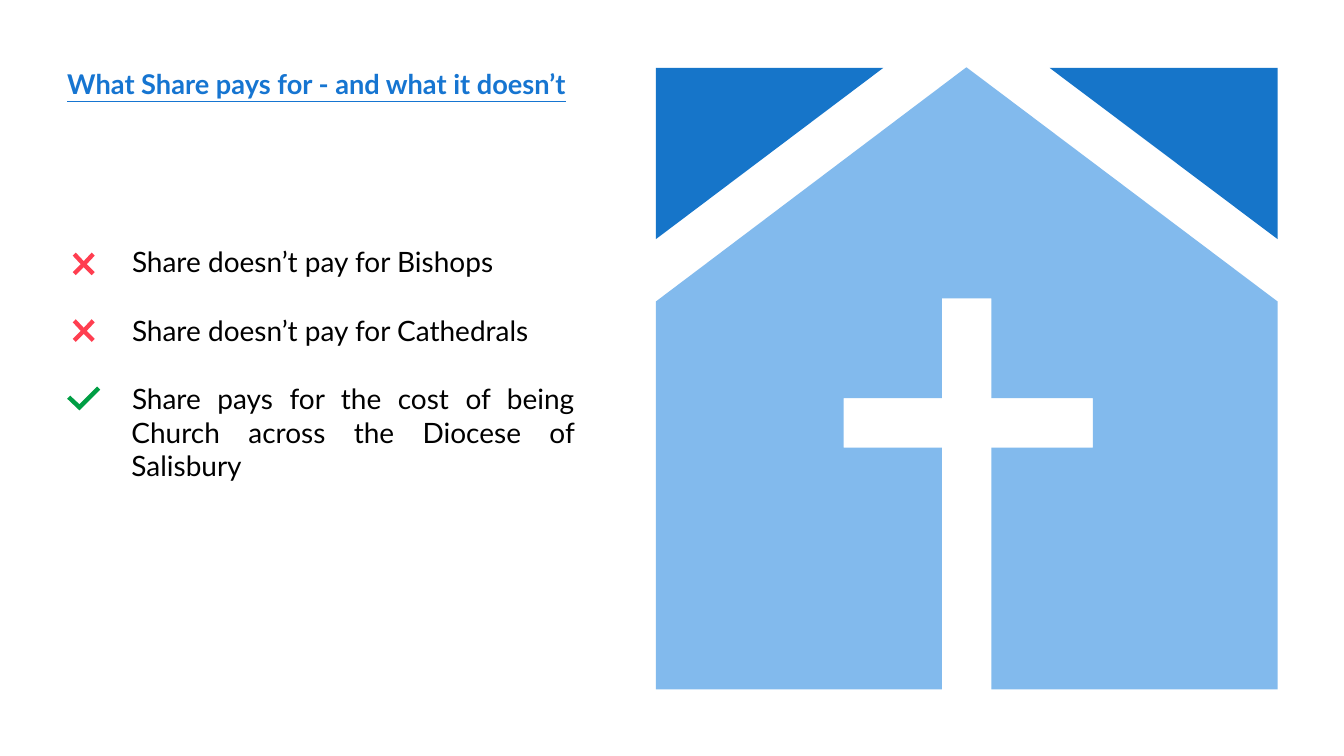
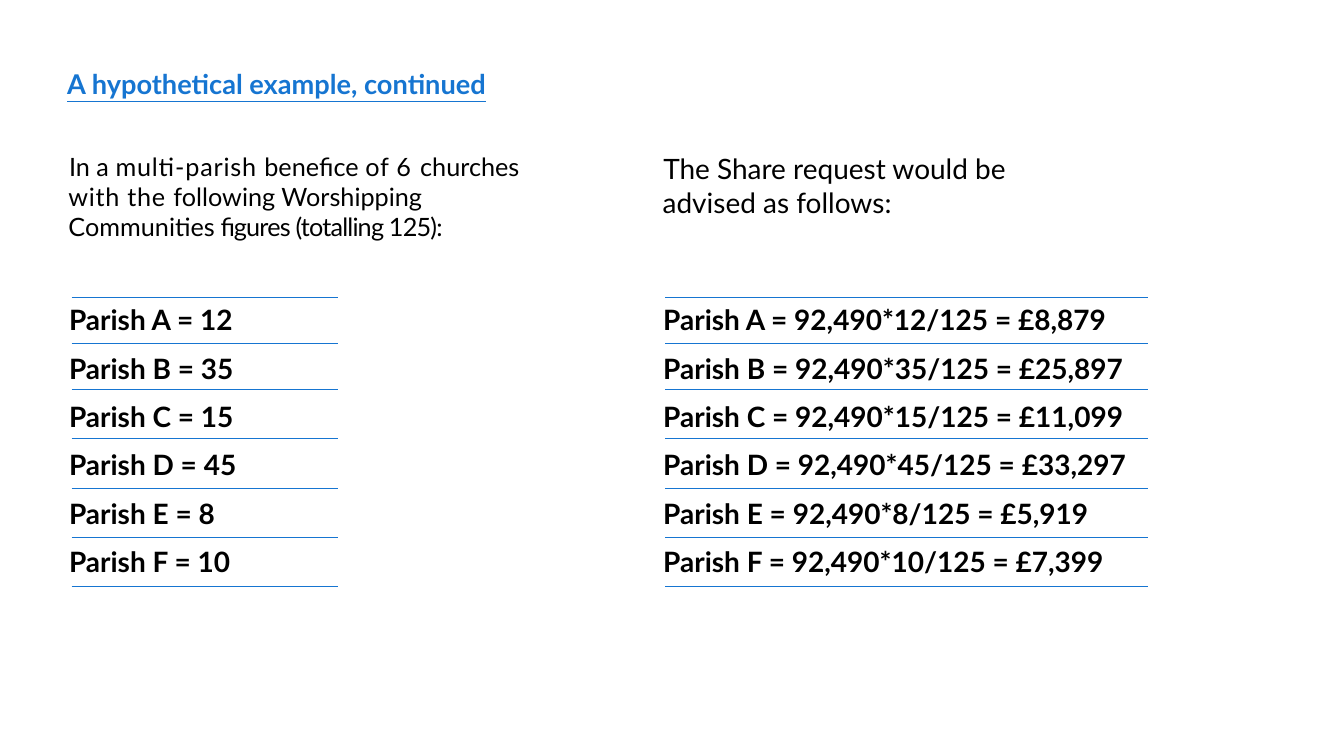
from lxml import etree
from pptx import Presentation
from pptx import util as u
from pptx.dml.color import RGBColor
from pptx.enum import shapes, text
from pptx.oxml import ns

PX = 9144
WIDE = u.Pt(1583)
HIGH = u.Pt(890)
FONT = "Lato"
BLACK = RGBColor(0x00, 0x00, 0x00)
BLUE = RGBColor(0x16, 0x75, 0xD1)
ROOF = RGBColor(0x16, 0x75, 0xC9)
WALL = RGBColor(0x82, 0xBA, 0xED)
GREEN = RGBColor(0x00, 0x9E, 0x44)
RED = RGBColor(0xFF, 0x3E, 0x50)

TICK = [(49, 0), (20, 29), (5, 15), (0, 20), (20, 39), (54, 5)]
CROSS = [(31, 0), (18, 14), (5, 0), (0, 5), (13, 19), (0, 32),
         (5, 37), (18, 24), (31, 37), (36, 32), (23, 19), (36, 5)]
LEFT_SKY = [(1445, 111), (1073, 111), (1073, 391)]
RIGHT_SKY = [(1717, 111), (2090, 111), (2090, 391)]
CHURCH = [(2090, 493), (1581, 110), (1073, 493), (1073, 1127),
          (1541, 1127), (1541, 732), (1380, 732), (1380, 651),
          (1541, 651), (1541, 488), (1622, 488), (1622, 651),
          (1788, 651), (1788, 732), (1622, 732), (1622, 1127),
          (2090, 1127)]

POINTS = ["Share doesn’t pay for Bishops",
          "Share doesn’t pay for Cathedrals",
          "Share pays for the cost of being Church across the Diocese "
          "of Salisbury"]
INTRO = [("In a ", 0), ("multi-parish ", 90), ("benefice ", 0), ("of ", 90),
         ("6 ", 150), ("churches ", 0), ("with the ", 85),
         ("following Worshipping Communities", 0),
         (" figures (totalling 125):", -100)]
ROWS = [("A", 12, "8,879"), ("B", 35, "25,897"), ("C", 15, "11,099"),
        ("D", 45, "33,297"), ("E", 8, "5,919"), ("F", 10, "7,399")]
RULES = [486, 562, 637, 717, 798, 879, 958]


def add_frame(slide, x, y, w, h):
    box = slide.shapes.add_textbox(x * PX, y * PX, w * PX, h * PX)
    frame = box.text_frame
    frame.word_wrap = True
    frame.margin_left = frame.margin_right = 0
    frame.margin_top = frame.margin_bottom = 0
    frame.vertical_anchor = text.MSO_ANCHOR.TOP
    return frame


def style(para, size=33, color=BLACK, bold=False, under=False, indent=1):
    para._p.get_or_add_pPr().set("indent", str(indent * PX))
    font = para.font
    font.name = FONT
    font.size = u.Pt(size)
    font.color.rgb = color
    font.bold = bold
    font.underline = under


def add_text(slide, words, x, y, w, h, **look):
    para = add_frame(slide, x, y, w, h).paragraphs[0]
    para.text = words
    style(para, **look)


def add_title(slide, words):
    add_text(slide, words, 110, 110, 1017, 54,
             size=32, color=BLUE, bold=True, under=True, indent=0)


def add_list(slide, items, x, y, w, h):
    frame = add_frame(slide, x, y, w, h)
    for i, item in enumerate(items):
        para = frame.add_paragraph() if i else frame.paragraphs[0]
        para.text = item
        if i:
            para.alignment = text.PP_ALIGN.JUSTIFY
            para.space_before = u.Pt(41)
        style(para)


def add_spaced(slide, parts, x, y, w, h, size):
    para = add_frame(slide, x, y, w, h).paragraphs[0]
    for words, gap in parts:
        run = para.add_run()
        run.text = words
        if gap:
            run.font._element.set("spc", str(gap))
    style(para, size=size)


def add_form(slide, points, color, x=0, y=0):
    spots = [(x + dx, y + dy) for dx, dy in points]
    pen = slide.shapes.build_freeform(*spots[0], scale=PX)
    pen.add_line_segments(spots[1:], close=True)
    shape = pen.convert_to_shape()
    shape.shadow.inherit = False
    shape.fill.solid()
    shape.fill.fore_color.rgb = color
    shape.line.fill.background()


def add_rule(slide, x, y, w):
    rule = slide.shapes.add_connector(
        shapes.MSO_CONNECTOR.STRAIGHT, x * PX, y * PX, (x + w) * PX, y * PX)
    rule.line.color.rgb = BLUE
    rule.line.width = u.Pt(0.82)
    etree.SubElement(rule._element.spPr, ns.qn("a:effectLst"))


def add_rows(slide, rows, x, left, w):
    for y in RULES:
        add_rule(slide, left, y, w)
    for i, row in enumerate(rows):
        add_text(slide, row, x, 495 + 79 * i, 950, 56, bold=True)


def draw_share(slide):
    add_title(slide, "What Share pays for - and what it doesn’t")
    add_form(slide, TICK, GREEN, 110, 632)
    for y in (413, 522):
        add_form(slide, CROSS, RED, 119, y)
    add_list(slide, POINTS, 215, 400, 725, 392)
    add_form(slide, LEFT_SKY, ROOF)
    add_form(slide, RIGHT_SKY, ROOF)
    add_form(slide, CHURCH, WALL)


def draw_sums(slide):
    add_title(slide, "A hypothetical example, continued")
    add_text(slide, "The Share request would be advised as follows:",
             1084, 248, 571, 111)
    add_rows(slide, [f"Parish {name} = 92,490*{count}/125 = £{cost}"
                     for name, count, cost in ROWS], 1084, 1088, 790)
    add_spaced(slide, INTRO, 112, 247, 790, 200, 29.7)
    add_rows(slide, [f"Parish {name} = {count}" for name, count, _ in ROWS],
             112, 117, 436)


def main():
    deck = Presentation()
    deck.slide_width = WIDE
    deck.slide_height = HIGH
    for draw in (draw_share, draw_sums):
        draw(deck.slides.add_slide(deck.slide_layouts[6]))
    deck.save("out.pptx")


if __name__ == "__main__":
    main()
